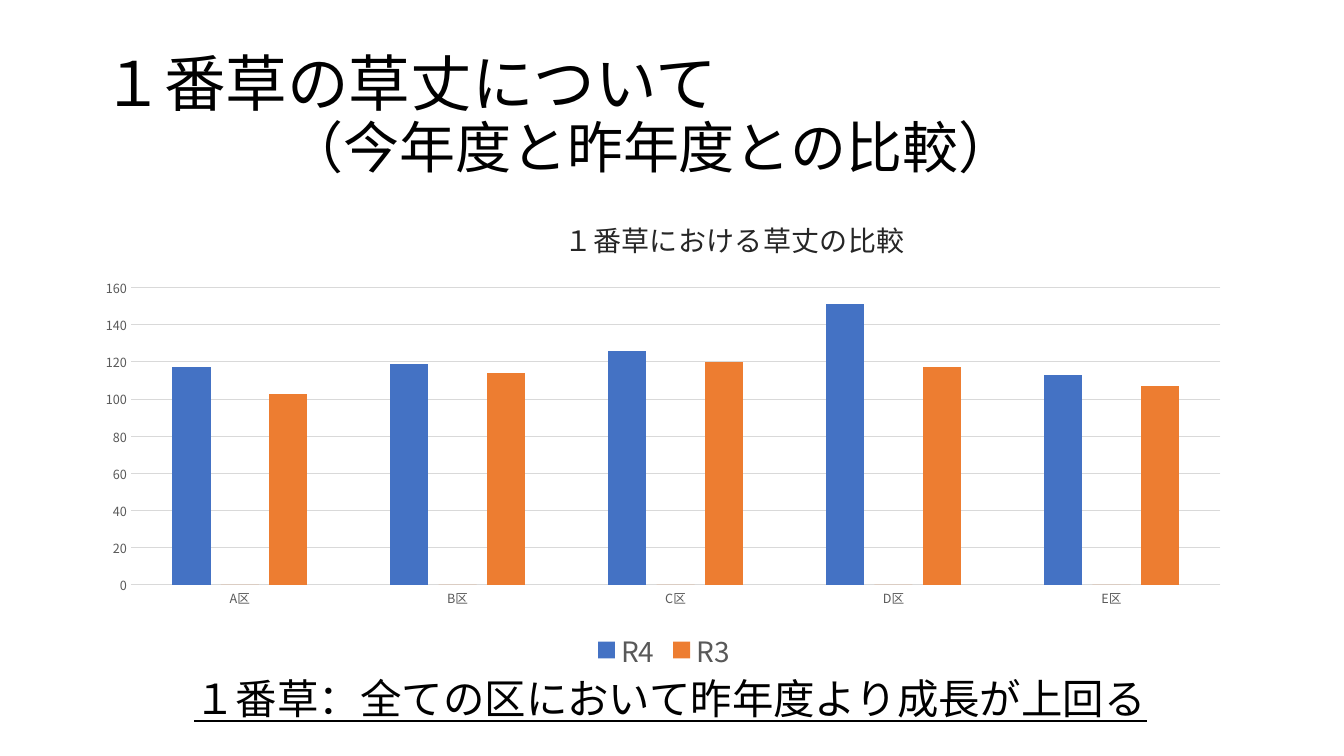
from lxml.etree import SubElement
from pptx import Presentation
from pptx.chart.data import CategoryChartData
from pptx.dml.color import RGBColor
from pptx.enum.chart import XL_CHART_TYPE, XL_LEGEND_POSITION, XL_TICK_MARK
from pptx.enum.text import MSO_ANCHOR, PP_ALIGN
from pptx.oxml import parse_xml
from pptx.oxml.ns import nsdecls, qn
from pptx.util import Cm, Pt

BLACK = RGBColor(0x00, 0x00, 0x00)
DARK = RGBColor(0x26, 0x26, 0x26)
GRAY = RGBColor(0x59, 0x59, 0x59)
PALE = RGBColor(0xD9, 0xD9, 0xD9)
BLUE = RGBColor(0x44, 0x72, 0xC4)
ORANGE = RGBColor(0xED, 0x7D, 0x31)
SANS = "Noto Sans CJK JP"


def style(font, size, color, name=SANS):
    font.size = Pt(size)
    font.color.rgb = color
    font.name = name


def place(part, index, **sizes):
    """Give a chart part a manual layout in fractions of the chart."""
    old = part.find(qn("c:layout"))
    if old is not None:
        part.remove(old)
    layout = parse_xml(f"<c:layout {nsdecls('c')}><c:manualLayout/></c:layout>")
    if "w" in sizes:
        SubElement(layout[0], qn("c:layoutTarget"), val="inner")
    for key in ("x", "y"):
        SubElement(layout[0], qn(f"c:{key}Mode"), val="edge")
    for key, size in sizes.items():
        SubElement(layout[0], qn(f"c:{key}"), val=str(size))
    part.insert(index, layout)


deck = Presentation()
deck.slide_width = Cm(33.87)
deck.slide_height = Cm(19.05)
slide = deck.slides.add_slide(deck.slide_layouts[5])

# Title
title = slide.shapes.title
title.left, title.top = Cm(2.33), Cm(1.1)
title.width, title.height = Cm(29.21), Cm(3.68)
frame = title.text_frame
frame.text = "１番草の草丈について\n（今年度と昨年度との比較）"
frame.word_wrap = True
frame.vertical_anchor = MSO_ANCHOR.MIDDLE
for line, size in zip(frame.paragraphs, (44, 40)):
    line.alignment = PP_ALIGN.LEFT
    line.line_spacing = 0.9
    style(line.runs[0].font, size, BLACK, "Arial")
indent = frame.paragraphs[1]._p.get_or_add_pPr()
indent.set("marL", str(Cm(4.66)))
indent.set("indent", "0")

# Chart: an empty middle series keeps the two years apart
data = CategoryChartData()
data.categories = ["A区", "B区", "C区", "D区", "E区"]
data.add_series("R4", (117, 119, 126, 151, 113))
data.add_series("Series 2", (0, 0, 0, 0, 0))
data.add_series("R3", (103, 114, 120, 117, 107))
chart = slide.shapes.add_chart(
    XL_CHART_TYPE.COLUMN_CLUSTERED, Cm(2.13), Cm(4.95), Cm(29.21), Cm(12.09), data
).chart
style(chart.font, 10, BLACK)

plot = chart.plots[0]
plot.gap_width = 219
plot.overlap = -27
plot.vary_by_categories = False
for series, color in zip(plot.series, (BLUE, ORANGE, ORANGE)):
    series.format.fill.solid()
    series.format.fill.fore_color.rgb = color

for axis in (chart.category_axis, chart.value_axis):
    axis.major_tick_mark = axis.minor_tick_mark = XL_TICK_MARK.NONE
    style(axis.tick_labels.font, 9, GRAY)
scale = chart.value_axis
scale.minimum_scale, scale.maximum_scale, scale.major_unit = 0, 160, 20
scale.format.line.fill.background()
for line in (chart.category_axis.format.line, scale.major_gridlines.format.line):
    line.color.rgb = PALE
    line.width = Pt(0.75)

chart.has_title = True
head = chart.chart_title
head.text_frame.text = "１番草における草丈の比較"
run = head.text_frame.paragraphs[0].runs[0]
style(run.font, 20, DARK)
run.font.bold = False
place(head._element, 1, x=0.41, y=0.03)
place(chart._chartSpace.chart.plotArea, 0, x=0.04, y=0.19, w=0.94, h=0.62)

chart.has_legend = True
legend = chart.legend
legend.position = XL_LEGEND_POSITION.BOTTOM
legend.include_in_layout = False
style(legend.font, 20, GRAY)
hidden = parse_xml(
    f"<c:legendEntry {nsdecls('c')}><c:idx val='1'/><c:delete val='1'/></c:legendEntry>"
)
legend._element.insert(1, hidden)

# Conclusion
note = slide.shapes.add_textbox(Cm(4.65), Cm(17.09), Cm(29.21), Cm(1.27)).text_frame
note.text = "１番草：全ての区において昨年度より成長が上回る"
note.word_wrap = True
line = note.paragraphs[0]
line.line_spacing = 0.8
line.space_before = Pt(10)
run = line.runs[0]
style(run.font, 29.6, BLACK)
run.font.underline = True
SubElement(run._r.get_or_add_rPr(), qn("a:ea"), typeface=SANS)

deck.save("out.pptx")
